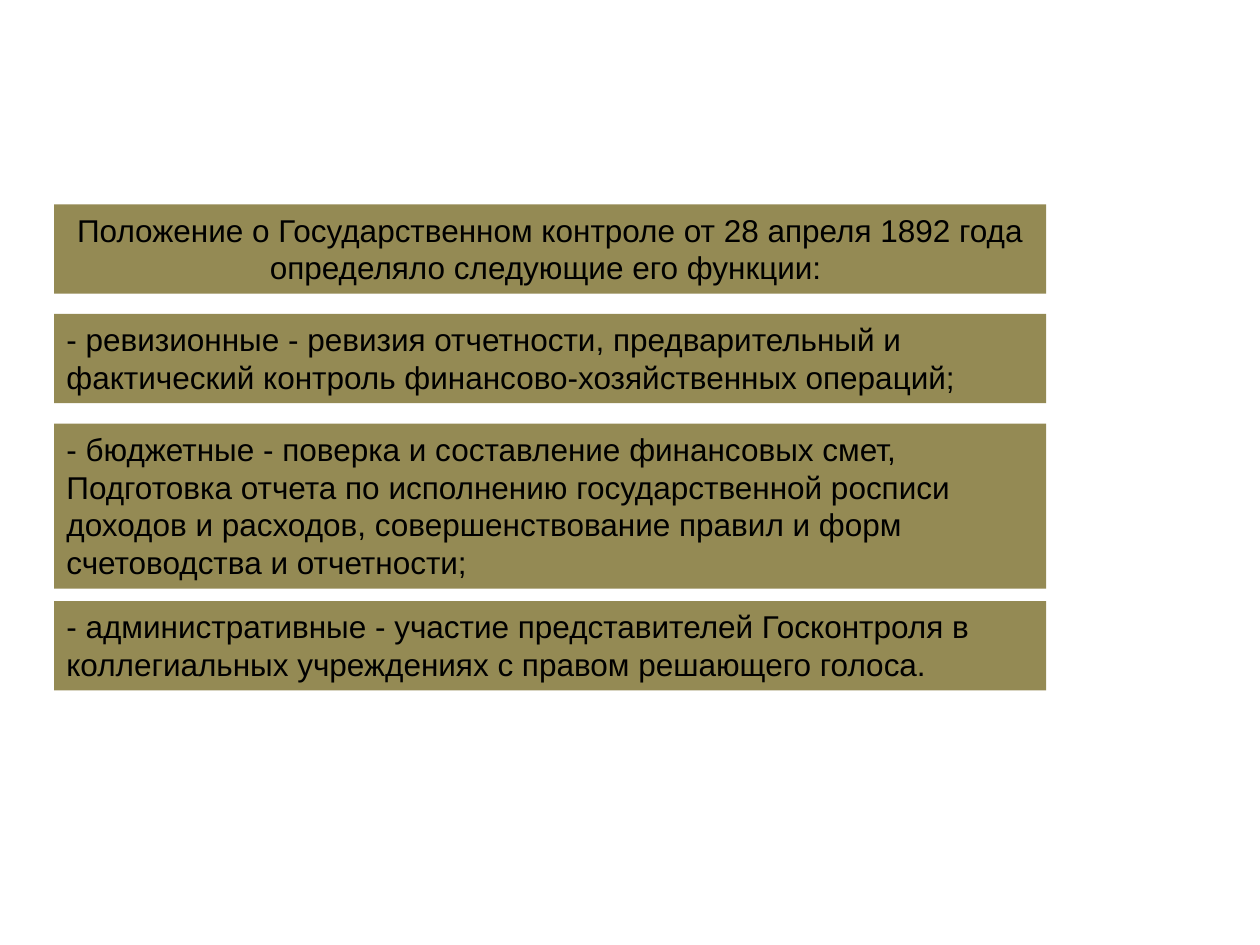
from pptx import Presentation
from pptx.dml.color import RGBColor
from pptx.enum.shapes import MSO_SHAPE
from pptx.enum.text import MSO_ANCHOR, PP_ALIGN
from pptx.util import Cm, Pt

RECTANGLE = MSO_SHAPE.RECTANGLE
TOP = MSO_ANCHOR.TOP
LEFT, CENTER = PP_ALIGN.LEFT, PP_ALIGN.CENTER

COLORS = {"band": "948A54", "text": "000000"}
FONT = "Arial"

HEADING = ("Положение о Государственном контроле от 28 апреля 1892 года "
           "определяло следующие его функции: ")

# Top offset within the list, height, text
FUNCTIONS = [
    (0, 1.8, "- ревизионные - ревизия отчетности, предварительный и фактический "
             "контроль финансово-хозяйственных операций;"),
    (2.21, 3.33, "- бюджетные - поверка и составление финансовых смет, Подготовка "
                 "отчета по исполнению государственной росписи доходов и расходов, "
                 "совершенствование правил и форм счетоводства и отчетности;"),
    (5.79, 1.8, "- административные - участие представителей Госконтроля в "
                "коллегиальных учреждениях с правом решающего голоса."),
]


def add_band(page, left, top, width, height, text, align):
    """Filled text band; lengths in centimetres."""
    box = page.shapes.add_shape(RECTANGLE, Cm(left), Cm(top), Cm(width), Cm(height))
    box.shadow.inherit = False
    box.fill.solid()
    box.fill.fore_color.rgb = RGBColor.from_string(COLORS["band"])
    box.line.fill.background()
    frame = box.text_frame
    frame.word_wrap = True
    frame.vertical_anchor = TOP
    para = frame.paragraphs[0]
    para.text = text
    para.alignment = align
    para.font.name = FONT
    para.font.size = Pt(18)
    para.font.color.rgb = RGBColor.from_string(COLORS["text"])


def add_functions(page, left, top, width):
    for offset, height, text in FUNCTIONS:
        add_band(page, left, top + offset, width, height, text, LEFT)


def main():
    deck = Presentation()
    deck.slide_width, deck.slide_height = Cm(25.4), Cm(19.05)
    page = deck.slides.add_slide(deck.slide_layouts[6])

    # Heading, then the list of functions
    left, width = 1.09, 20
    add_band(page, left, 4.12, width, 1.8, HEADING, CENTER)
    add_functions(page, left, 6.33, width)

    deck.save("out.pptx")


if __name__ == "__main__":
    main()
